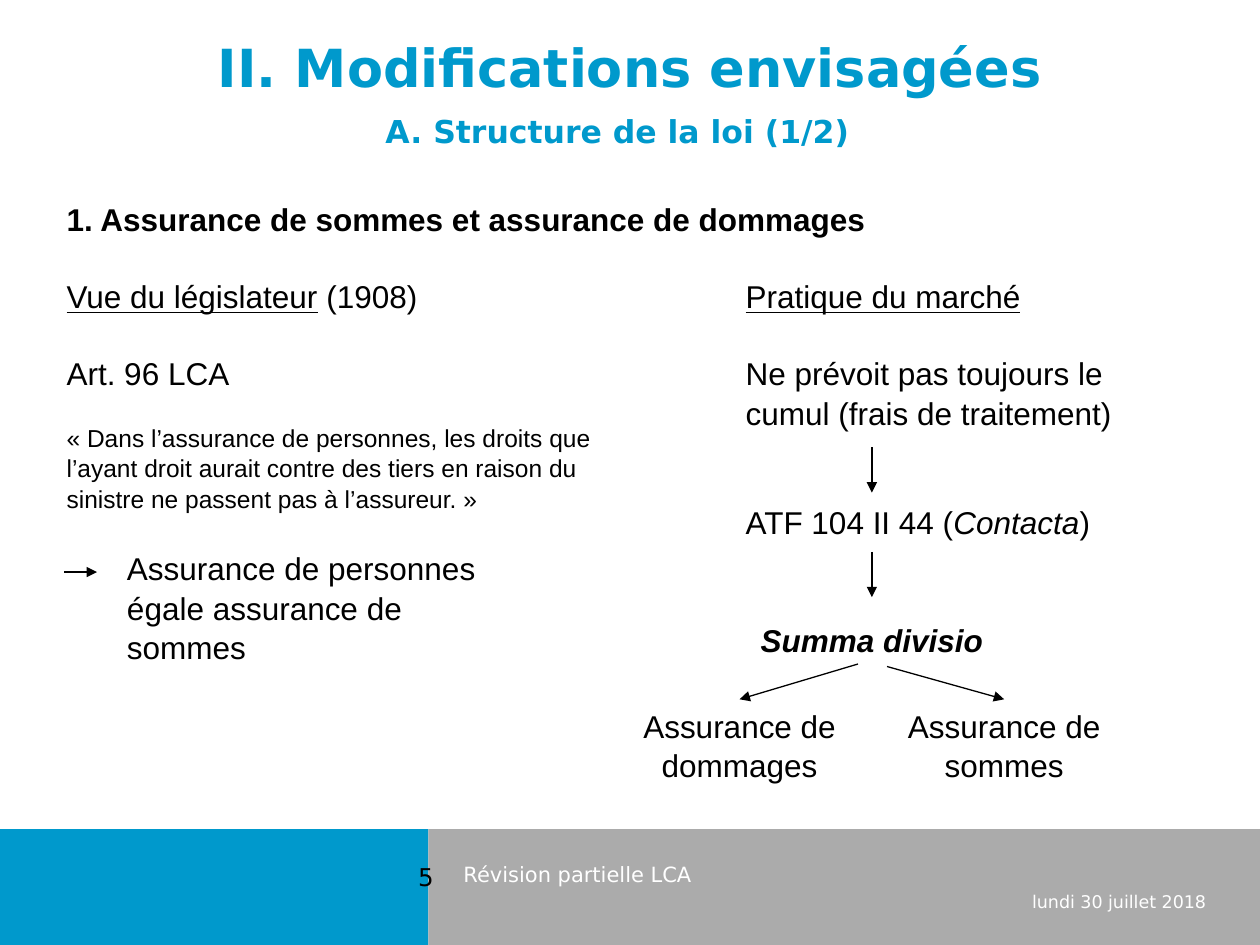
from dataclasses import dataclass

from lxml import etree
from pptx import Presentation
from pptx.dml.color import RGBColor
from pptx.enum.shapes import MSO_CONNECTOR, MSO_SHAPE
from pptx.enum.text import MSO_ANCHOR, PP_ALIGN
from pptx.oxml.ns import qn
from pptx.util import Inches, Pt

LEFT, CENTER, RIGHT = PP_ALIGN.LEFT, PP_ALIGN.CENTER, PP_ALIGN.RIGHT
TOP, MIDDLE, BOTTOM = MSO_ANCHOR.TOP, MSO_ANCHOR.MIDDLE, MSO_ANCHOR.BOTTOM
RECTANGLE, STRAIGHT = MSO_SHAPE.RECTANGLE, MSO_CONNECTOR.STRAIGHT


@dataclass(frozen=True)
class Theme:
    blue: RGBColor = RGBColor(0x00, 0x99, 0xCC)
    gray: RGBColor = RGBColor(0xAB, 0xAB, 0xAB)
    black: RGBColor = RGBColor(0x00, 0x00, 0x00)
    white: RGBColor = RGBColor(0xFF, 0xFF, 0xFF)
    heading_font: str = "DejaVu Sans"
    body_font: str = "Arial"
    title: int = 30
    body: int = 18
    quote: int = 14
    footer: int = 12
    date: int = 10
    line_spacing: float = 1.04


THEME = Theme()
COLUMNS, ROWS = 100, 75
CELL = Inches(10) / COLUMNS

MARGIN, MARKET, AXIS = 4.3, 58.2, 69.2
BRANCH = 21
HALF = BRANCH / 2
BODY_ROW, FOOTER_ROW, FOOTER_TEXT_ROW, BRANCH_ROW = 21.4, 65.8, 67.9, 55.5
FOOTER_SPLIT = 34

BODY = {"name": THEME.body_font, "size": Pt(THEME.body), "color": THEME.black}
BOLD = {**BODY, "bold": True}
ITALIC = {**BODY, "italic": True}
UNDERLINED = {**BODY, "underline": True}
QUOTE = {**BODY, "size": Pt(THEME.quote)}
TITLE = {"name": THEME.heading_font, "size": Pt(THEME.title), "color": THEME.blue, "bold": True}
SUBTITLE = {**TITLE, "size": Pt(THEME.body)}
FOOTER = {"name": THEME.heading_font, "size": Pt(THEME.footer), "color": THEME.white}
DATE = {**FOOTER, "size": Pt(THEME.date)}
NUMBER = {**FOOTER, "size": Pt(THEME.quote), "color": THEME.black}

TITLE_BOX = (2.5, 0.3, 95, 9.9)
TITLE_TEXT = [(0, [("II. Modifications envisagées", TITLE)])]

BANDS = [
    ((0, FOOTER_ROW, FOOTER_SPLIT, ROWS - FOOTER_ROW), THEME.blue),
    ((FOOTER_SPLIT, FOOTER_ROW, COLUMNS - FOOTER_SPLIT, ROWS - FOOTER_ROW), THEME.gray),
    ((4.2, FOOTER_ROW, 24.2, 5.8), THEME.blue),
]

HEADINGS = [
    ((1.5, 5.4, 95, 9.9), CENTER, MIDDLE, [(0, [("A. Structure de la loi (1/2)", SUBTITLE)])]),
    ((78.4, FOOTER_TEXT_ROW, 18.3, 5), RIGHT, BOTTOM, [(0, [("lundi 30 juillet 2018", DATE)])]),
    ((35.8, FOOTER_TEXT_ROW, 44.2, 5), LEFT, TOP, [(0, [("Révision partielle LCA", FOOTER)])]),
    ((30.7, FOOTER_TEXT_ROW, 6.2, 3.4), CENTER, MIDDLE, [(0, [("5", NUMBER)])]),
]

BODY_TEXTS = [
    ((MARGIN, 15.3, 89.4, 4), LEFT, TOP,
     [(0, [("1. Assurance de sommes et assurance de dommages", BOLD)])]),
    ((MARGIN, BODY_ROW, 44.9, 19.5), LEFT, TOP, [
        (0, [("Vue du législateur", UNDERLINED), (" (1908)", BODY)]),
        (21.6, [("Art. 96 LCA", BODY)]),
        (16.8, [("« Dans l’assurance de personnes, les droits que l’ayant droit aurait "
                 "contre des tiers en raison du sinistre ne passent pas à l’assureur. »", QUOTE)]),
    ]),
    ((9.1, 43, 30.6, 10.1), LEFT, TOP,
     [(0, [("Assurance de personnes égale assurance de sommes", BODY)])]),
    ((MARKET, BODY_ROW, 37, 13.1), LEFT, TOP, [
        (0, [("Pratique du marché", UNDERLINED)]),
        (21.6, [("Ne prévoit pas toujours le cumul (frais de traitement)", BODY)]),
    ]),
    ((MARKET, 39.3, 37, 4), LEFT, TOP,
     [(0, [("ATF 104 II 44 (", BODY), ("Contacta", ITALIC), (")", BODY)])]),
    ((AXIS - HALF, 48.7, BRANCH, 4), CENTER, TOP,
     [(0, [("Summa divisio", {**BOLD, "italic": True})])]),
    ((AXIS - BRANCH, BRANCH_ROW, BRANCH, 7.1), CENTER, TOP,
     [(0, [("Assurance de dommages", BODY)])]),
    ((AXIS, BRANCH_ROW, BRANCH, 7.1), CENTER, TOP,
     [(0, [("Assurance de sommes", BODY)])]),
]

ARROWS = [
    (5.1, 45.4, 7.7, 45.4),
    (AXIS, 35.5, AXIS, 39.1),
    (AXIS, 43.8, AXIS, 47.4),
    (AXIS - 1.1, 52.7, AXIS - HALF, BRANCH_ROW),
    (AXIS + 1.2, 52.9, AXIS + HALF, BRANCH_ROW),
]


def on_grid(lengths):
    return [round(length * CELL) for length in lengths]


def place(shape, box):
    for name, value in zip(("left", "top", "width", "height"), on_grid(box)):
        setattr(shape, name, value)


def write(shape, alignment, anchor, paragraphs, line_spacing=1.0):
    frame = shape.text_frame
    frame.word_wrap = True
    frame.vertical_anchor = anchor
    for index, (space_before, runs) in enumerate(paragraphs):
        paragraph = frame.add_paragraph() if index else frame.paragraphs[0]
        layout = {"alignment": alignment, "line_spacing": line_spacing,
                  "space_before": Pt(space_before), "space_after": Pt(0)}
        for name, value in layout.items():
            setattr(paragraph, name, value)
        for text, style in runs:
            run = paragraph.add_run()
            run.text = text
            for name, value in style.items():
                if name == "color":
                    run.font.color.rgb = value
                else:
                    setattr(run.font, name, value)


def add_band(slide, box, color):
    band = slide.shapes.add_shape(RECTANGLE, *on_grid(box))
    band.shadow.inherit = False
    band.fill.solid()
    band.fill.fore_color.rgb = color
    band.line.fill.background()


def add_arrow(slide, ends):
    arrow = slide.shapes.add_connector(STRAIGHT, *on_grid(ends))
    arrow.line.color.rgb = THEME.black
    arrow.line.width = Pt(0.75)
    etree.SubElement(arrow.line._get_or_add_ln(), qn("a:tailEnd"), type="triangle")
    etree.SubElement(arrow._element.spPr, qn("a:effectLst"))


def main():
    presentation = Presentation()
    presentation.slide_width = Inches(10)
    presentation.slide_height = Inches(7.5)
    slide = presentation.slides.add_slide(presentation.slide_layouts[5])

    for box, color in BANDS:
        add_band(slide, box, color)
    title = slide.shapes.title
    place(title, TITLE_BOX)
    write(title, CENTER, MIDDLE, TITLE_TEXT)
    for texts, spacing in ((HEADINGS, 1.0), (BODY_TEXTS, THEME.line_spacing)):
        for box, alignment, anchor, paragraphs in texts:
            text_box = slide.shapes.add_textbox(*on_grid(box))
            write(text_box, alignment, anchor, paragraphs, spacing)
    for ends in ARROWS:
        add_arrow(slide, ends)

    presentation.save("out.pptx")


if __name__ == "__main__":
    main()
